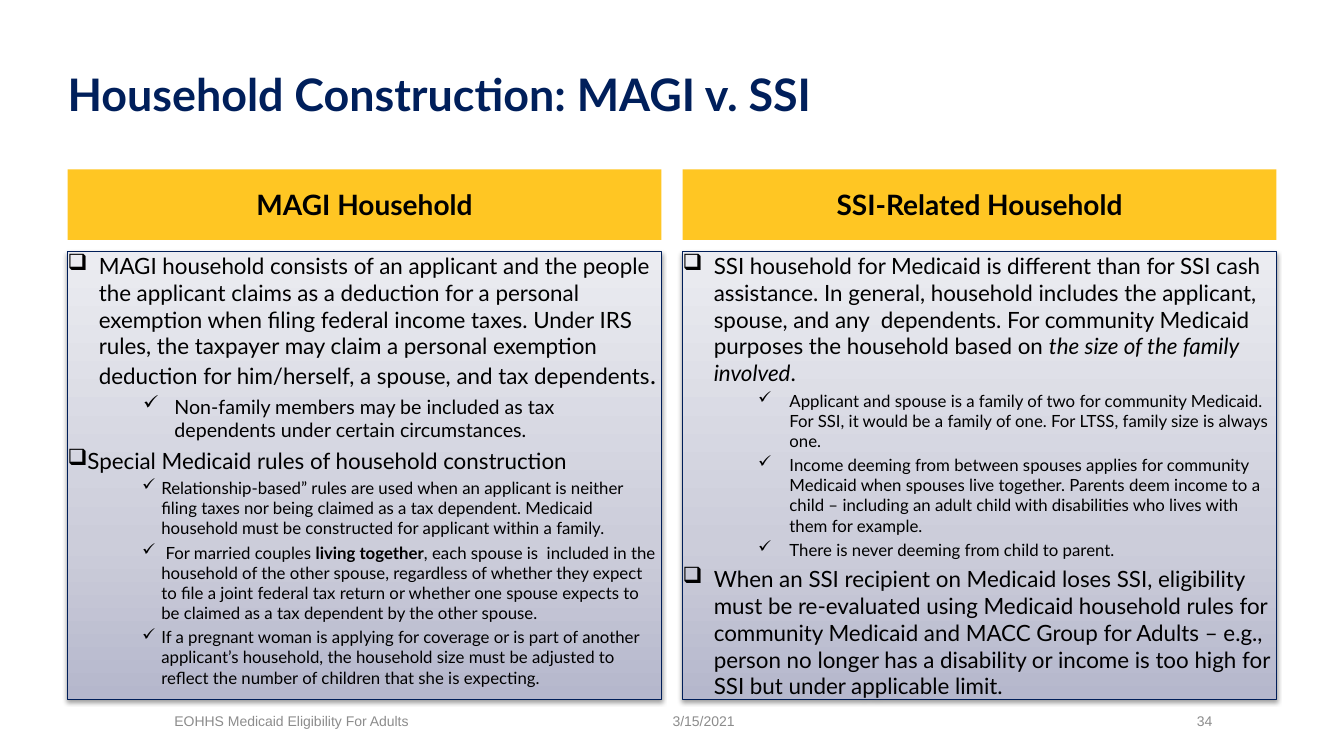
from pptx import Presentation
from pptx.dml.color import RGBColor
from pptx.enum.shapes import MSO_SHAPE
from pptx.enum.text import MSO_ANCHOR, PP_ALIGN
from pptx.oxml import parse_xml
from pptx.oxml.ns import nsdecls, qn
from pptx.util import Inches, Pt

RECT = MSO_SHAPE.RECTANGLE
TOP, MID = MSO_ANCHOR.TOP, MSO_ANCHOR.MIDDLE
LEFT, MIDDLE = PP_ALIGN.LEFT, PP_ALIGN.CENTER

THEME = {
    "font": "Lato", "small": "Arial",
    "navy": "001F5B", "edge": "001E59", "gold": "FFC623",
    "ink": "000000", "gray": "8C8C8C",
    "fade": [(0, "B5B7CC"), (35, "CCCDDA"), (100, "EBECF1")],
    "title": 32, "head": 20, "big": 18, "body": 16, "mid": 14, "note": 12,
    "foot": 10,
}
BIG, BODY, MED, NOTE = (THEME[k] for k in ("big", "body", "mid", "note"))

# Grid: two columns inside equal margins
WIDE, HIGH = 13.33, 7.5
EDGE, COL, STEP = 0.67, 5.89, 6.1
HEAD_Y, HEAD_H = 1.68, 0.7
BODY_Y, BODY_H = 2.5, 4.44
FOOT_Y, FOOT_H = 6.95, 0.4

# Each point: level, left indent, hanging indent, runs of (text, size, style)
COLUMNS = [
    ("MAGI Household", [
        (0, 0.31, 0.31, [
            ("MAGI household consists of an applicant and the people the applicant "
             "claims as a deduction for a personal exemption when filing federal "
             "income taxes. Under IRS rules, the taxpayer may claim a personal "
             "exemption deduction for him/herself, a spouse, and tax dependents",
             BODY, ""),
            (".", BIG, "")]),
        (1, 1.06, 0.31, [
            ("Non-family members may be included as tax dependents under certain "
             "circumstances.", MED, "")]),
        (0, 0.19, 0.19, [
            ("Special Medicaid rules of household construction", BODY, "")]),
        (1, 0.93, 0.19, [
            ("Relationship-based” rules are used when an applicant is neither filing "
             "taxes nor being claimed as a tax dependent. Medicaid household must be "
             "constructed for applicant within a family.", NOTE, "")]),
        (1, 0.93, 0.19, [
            (" For married couples ", NOTE, ""),
            ("living together", NOTE, "b"),
            (", each spouse is  included in the household of the other spouse, "
             "regardless of whether they expect to file a joint federal tax return "
             "or whether one spouse expects to be claimed as a tax dependent by the "
             "other spouse.", NOTE, "")]),
        (1, 0.93, 0.19, [
            ("If a pregnant woman is applying for coverage or is part of another "
             "applicant’s household, the household size must be adjusted to reflect "
             "the number of children that she is expecting.", NOTE, "")]),
    ]),
    ("SSI-Related Household", [
        (0, 0.31, 0.31, [
            ("SSI household for Medicaid is different than for SSI cash assistance. "
             "In general, household includes the applicant, spouse, and any  "
             "dependents. For community Medicaid purposes the household based on ",
             BODY, ""),
            ("the size of the family involved", BODY, "i"),
            (".", BODY, "")]),
        (1, 1.06, 0.31, [
            ("Applicant and spouse is a family of two for community Medicaid. For "
             "SSI, it would be a family of one. For LTSS, family size is always one.",
             NOTE, "")]),
        (1, 1.06, 0.31, [
            ("Income deeming from between spouses applies for community Medicaid "
             "when spouses live together. Parents deem income to a child – including "
             "an adult child with disabilities who lives with them for example.",
             NOTE, "")]),
        (1, 1.06, 0.31, [
            ("There is never deeming from child to parent.", NOTE, "")]),
        (0, 0.31, 0.31, [
            ("When an SSI recipient on Medicaid loses SSI, eligibility must be "
             "re-evaluated using Medicaid household rules for community Medicaid and "
             "MACC Group for Adults – e.g., person no longer has a disability or "
             "income is too high for SSI but under applicable limit.", BODY, "")]),
    ]),
]


def frame(shape, anchor):
    text = shape.text_frame
    text.word_wrap = True
    text.vertical_anchor = anchor
    text.margin_left = text.margin_right = 0
    text.margin_top = text.margin_bottom = 0
    return text


def write(para, text, size, color, style="", font=THEME["font"]):
    run = para.add_run()
    run.text = text
    run.font.name = font
    run.font.size = Pt(size)
    run.font.bold = "b" in style
    run.font.italic = "i" in style
    run.font.color.rgb = RGBColor.from_string(THEME[color])


deck = Presentation()
deck.slide_width, deck.slide_height = Inches(WIDE), Inches(HIGH)
slide = deck.slides.add_slide(deck.slide_layouts[6])
shapes = slide.shapes

# Title
box = shapes.add_textbox(Inches(EDGE), Inches(0.3), Inches(12), Inches(1.25))
write(frame(box, MID).paragraphs[0], "Household Construction: MAGI v. SSI",
      THEME["title"], "navy", "b")

for col, (name, points) in enumerate(COLUMNS):
    left = Inches(EDGE + col * STEP)

    # Column heading
    head = shapes.add_shape(RECT, left, Inches(HEAD_Y), Inches(COL), Inches(HEAD_H))
    head.shadow.inherit = False
    head.fill.solid()
    head.fill.fore_color.rgb = RGBColor.from_string(THEME["gold"])
    head.line.fill.background()
    para = frame(head, MID).paragraphs[0]
    para.alignment = MIDDLE
    write(para, name, THEME["head"], "ink", "b")

    # Panel with a fade and a soft shadow
    panel = shapes.add_shape(RECT, left, Inches(BODY_Y), Inches(COL), Inches(BODY_H))
    panel.line.color.rgb = RGBColor.from_string(THEME["edge"])
    panel.line.width = Pt(0.75)
    panel.fill.gradient()
    panel.fill.gradient_angle = 90
    props = panel.element.spPr
    stops = props.find(".//" + qn("a:gsLst"))
    for stop in list(stops):
        stops.remove(stop)
    for pos, tone in THEME["fade"]:
        stops.append(parse_xml(
            f'<a:gs {nsdecls("a")} pos="{pos * 1000}"><a:srgbClr val="{tone}"/></a:gs>'))
    panel.shadow.inherit = False
    props.find(qn("a:effectLst")).append(parse_xml(
        f'<a:outerShdw {nsdecls("a")} blurRad="{Pt(3.1)}" dist="{Pt(1.6)}" '
        'dir="5400000" rotWithShape="0"><a:srgbClr val="000000">'
        '<a:alpha val="38000"/></a:srgbClr></a:outerShdw>'))

    # Bulleted points
    text = frame(panel, TOP)
    for row, (level, indent, hang, runs) in enumerate(points):
        para = text.add_paragraph() if row else text.paragraphs[0]
        para.alignment = LEFT
        para.level = level
        node = para._p.get_or_add_pPr()
        node.set("marL", str(Inches(indent)))
        node.set("indent", str(-Inches(hang)))
        mark = "✓" if level else "❑"
        node.append(parse_xml(f'<a:buChar {nsdecls("a")} char="{mark}"/>'))
        if row:
            para.space_before = Pt(round(runs[0][1] * 0.24, 1))
        for words, size, style in runs:
            write(para, words, size, "ink", style)

# Footer
for left, width, words in [
    (1.73, 4.22, "EOHHS Medicaid Eligibility For Adults"),
    (6.67, 3.11, "3/15/2021"),
    (11.87, 0.8, "34"),
]:
    box = shapes.add_textbox(Inches(left), Inches(FOOT_Y), Inches(width), Inches(FOOT_H))
    write(frame(box, MID).paragraphs[0], words, THEME["foot"], "gray",
          font=THEME["small"])

deck.save("out.pptx")
